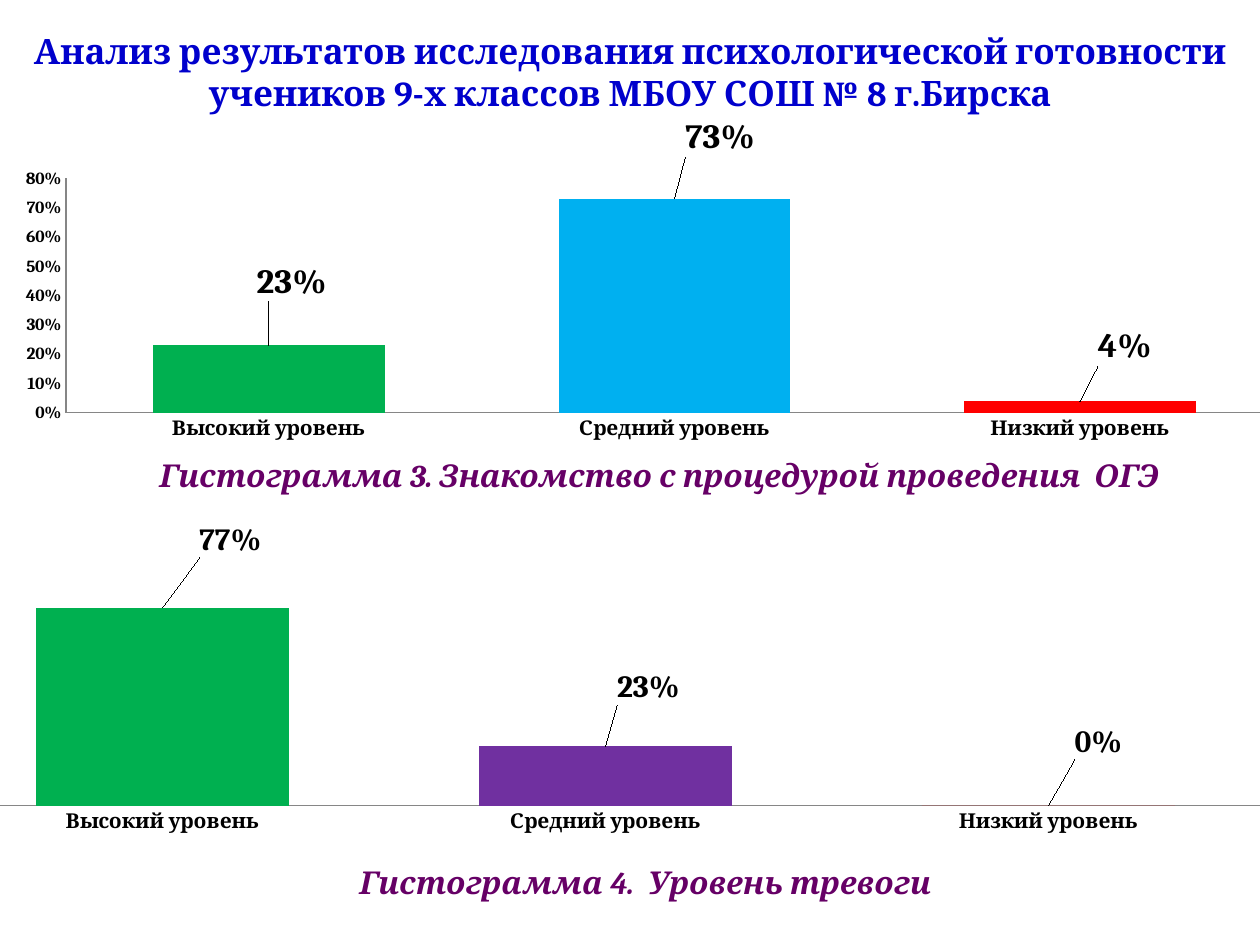
import pptx
import pptx.chart.data
import pptx.dml.color
import pptx.enum.chart
import pptx.enum.text
import pptx.util
from lxml import etree

RGB = pptx.dml.color.RGBColor
BLACK, GREY = RGB(0, 0, 0), RGB(0x86, 0x86, 0x86)
BLUE, PLUM = RGB(0, 0, 0xCC), RGB(0x66, 0, 0x66)
GREEN, SKY = RGB(0, 0xB0, 0x50), RGB(0, 0xB0, 0xF0)
VIOLET, RED = RGB(0x70, 0x30, 0xA0), RGB(0xFF, 0, 0)
FONT = "Cambria"
SCALE = 914400 // 126
ALIGN = pptx.enum.text.PP_ALIGN
ANCHOR = pptx.enum.text.MSO_ANCHOR
CHART = pptx.enum.chart

TITLE = ("Анализ результатов исследования психологической готовности "
         "учеников 9-х классов МБОУ СОШ № 8 г.Бирска")
CAPTIONS = [
    ("Гистограмма 3. Знакомство с процедурой проведения  ОГЭ", (147, 450, 1094, 50), ALIGN.LEFT),
    ("Гистограмма 4.  Уровень тревоги", (168, 857, 955, 50), ALIGN.CENTER),
]
LEVELS = ["Высокий уровень", "Средний уровень", "Низкий уровень"]
# frame and plot are left, top, width, height; shifts move each label from its bar
CHARTS = [
    {"frame": (-129, 522, 1428, 315), "plot": (-59, 568, 1329, 237), "maximum": 0.9,
     "values": [0.77, 0.23, 0], "colors": [GREEN, VIOLET, RED],
     "label_size": 18, "shifts": [(68, -46), (43, -37), (50, -42)]},
    {"frame": (0, 118, 1309, 325), "plot": (66, 170, 1217, 242), "maximum": 0.8,
     "values": [0.23, 0.73, 0.04], "colors": [GREEN, SKY, RED],
     "label_size": 20, "shifts": [(23, -40), (46, -38), (45, -31)]},
]


def px(*lengths):
    return [pptx.util.Emu(length * SCALE) for length in lengths]


def set_font(font, size, color=BLACK, bold=True, italic=False):
    for name, value in {"name": FONT, "size": pptx.util.Pt(size),
                        "bold": bold, "italic": italic}.items():
        setattr(font, name, value)
    font.color.rgb = color


def write(shape, text, align, anchor, **font_format):
    frame = shape.text_frame
    frame.word_wrap = True
    frame.auto_size = pptx.enum.text.MSO_AUTO_SIZE.NONE
    frame.vertical_anchor = anchor
    paragraph = frame.paragraphs[0]
    paragraph.alignment = align
    run = paragraph.add_run()
    run.text = text
    set_font(run.font, **font_format)


def manual_layout(**settings):
    namespace = "{http://schemas.openxmlformats.org/drawingml/2006/chart}"
    layout = etree.Element(namespace + "layout")
    manual = etree.SubElement(layout, namespace + "manualLayout")
    for name, value in settings.items():
        etree.SubElement(manual, namespace + name).set("val", str(value))
    return layout


def place_plot(chart, frame, plot):
    left, top, width, height = frame
    plot_area = chart.plots[0]._element.getparent()
    for old in plot_area.findall("{*}layout"):
        plot_area.remove(old)
    plot_area.insert(0, manual_layout(
        layoutTarget="inner", xMode="edge", yMode="edge",
        x=round((plot[0] - left) / width, 4), y=round((plot[1] - top) / height, 4),
        w=round(plot[2] / width, 4), h=round(plot[3] / height, 4)))


def format_axis(axis, size):
    axis.has_major_gridlines = False
    axis.major_tick_mark = axis.minor_tick_mark = CHART.XL_TICK_MARK.NONE
    axis.format.line.color.rgb = GREY
    axis.format.line.width = pptx.util.Pt(0.75)
    set_font(axis.tick_labels.font, size)


def add_histogram(slide, frame, plot, maximum, values, colors, label_size, shifts):
    data = pptx.chart.data.CategoryChartData(number_format="0%")
    data.categories = LEVELS
    data.add_series("Series 1", values)
    chart = slide.shapes.add_chart(
        CHART.XL_CHART_TYPE.COLUMN_CLUSTERED, *px(*frame), data).chart
    chart.has_legend = chart.has_title = False
    set_font(chart.font, 10, bold=False)
    format_axis(chart.category_axis, 12)
    format_axis(chart.value_axis, 10)
    for name, value in {"minimum_scale": 0, "maximum_scale": maximum,
                        "major_unit": 0.1}.items():
        setattr(chart.value_axis, name, value)
    chart.value_axis.tick_labels.number_format = "0%"
    chart.value_axis.tick_labels.number_format_is_linked = False
    place_plot(chart, frame, plot)

    bars = chart.plots[0]
    bars.gap_width = 75
    bars.vary_by_categories = False
    series = bars.series[0]
    labels = series.data_labels
    labels.show_value = True
    labels.number_format = "0%"
    labels.number_format_is_linked = False
    set_font(labels.font, label_size)
    for index, (color, (right, down)) in enumerate(zip(colors, shifts)):
        point = series.points[index]
        point.format.fill.solid()
        point.format.fill.fore_color.rgb = color
        set_font(point.data_label.font, label_size)
        point.data_label.position = CHART.XL_LABEL_POSITION.OUTSIDE_END
        label = labels._element.findall("{*}dLbl")[index]
        label.insert(1, manual_layout(x=round(right / frame[2], 4),
                                      y=round(down / frame[3], 4)))


def main():
    presentation = pptx.Presentation()
    presentation.slide_width, presentation.slide_height = px(1260, 945)
    slide = presentation.slides.add_slide(presentation.slide_layouts[5])

    title = slide.shapes.title
    title.left, title.top, title.width, title.height = px(0, -20, 1260, 183)
    title.text_frame.margin_top = px(49)[0]
    write(title, TITLE, ALIGN.CENTER, ANCHOR.TOP, size=20, color=BLUE)

    for text, box, align in CAPTIONS:
        write(slide.shapes.add_textbox(*px(*box)), text, align, ANCHOR.MIDDLE,
              size=18, color=PLUM, italic=True)
    for histogram in CHARTS:
        add_histogram(slide, **histogram)
    presentation.save("out.pptx")


if __name__ == "__main__":
    main()
